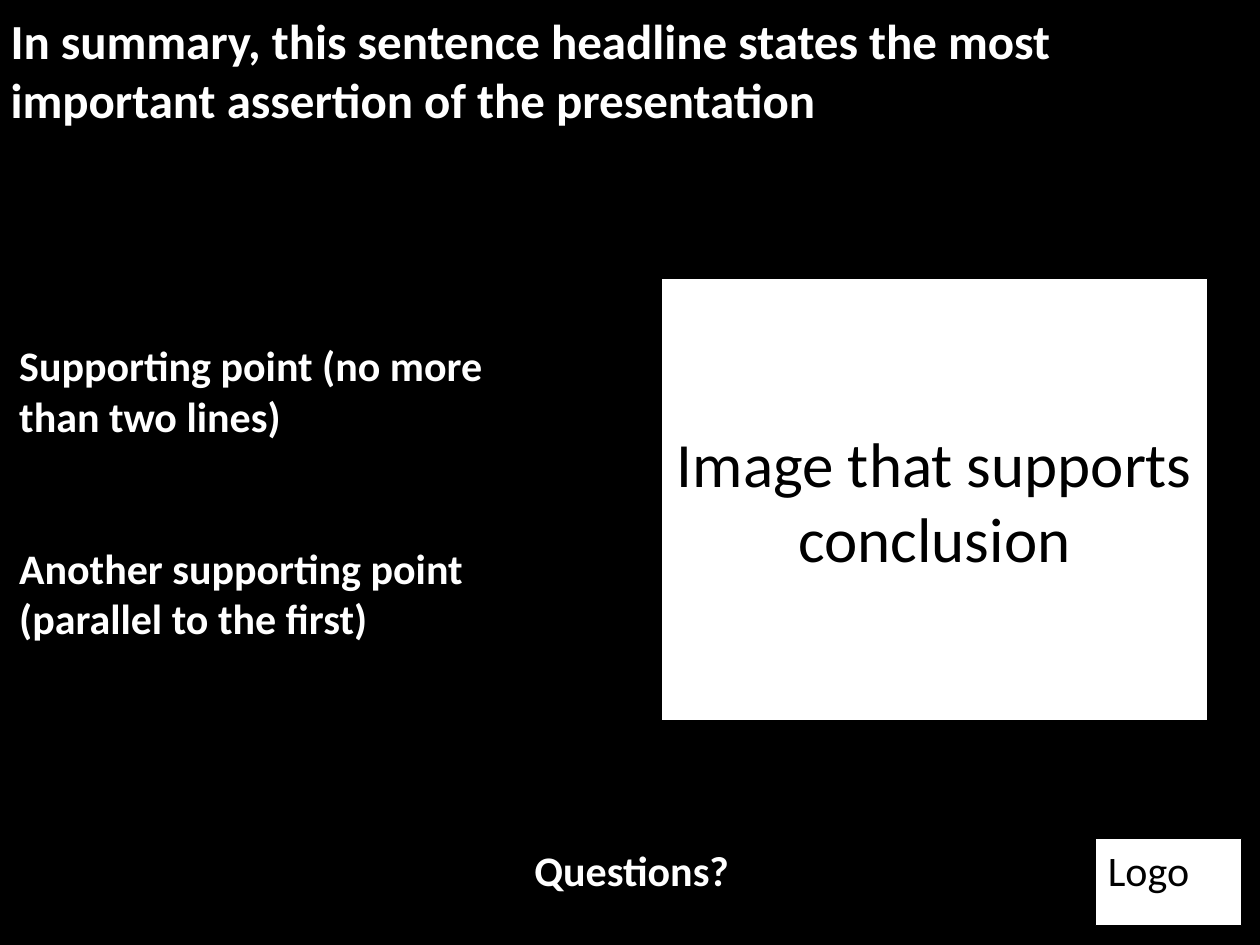
"""Build a closing slide with a headline, supporting points and an image box."""
import dataclasses

import lxml.etree
import pptx
import pptx.dml.color
import pptx.enum.shapes
import pptx.enum.text
import pptx.oxml.ns
import pptx.util

Pt = pptx.util.Pt
Align = pptx.enum.text.PP_ALIGN
Anchor = pptx.enum.text.MSO_ANCHOR
HUES = {"back": "000000", "light": "FFFFFF", "dark": "000000"}


@dataclasses.dataclass
class Box:
    left: float
    top: float
    width: float
    height: float
    lines: tuple[str, ...]
    size: float = 24
    hue: str = "light"
    bold: bool = True
    align: Align = Align.LEFT
    anchor: Anchor = Anchor.TOP
    inset: tuple[float, float] = (7.2, 3.6)
    gap: float = 0

    def frame(self) -> list[pptx.util.Length]:
        return [Pt(n) for n in (self.left, self.top, self.width, self.height)]


TITLE = Box(6, 6, 708, 68, ("In summary, this sentence headline states the most "
                            "important assertion of the presentation",),
            size=28, inset=(0, 0))
POINTS = Box(6, 192, 300, 179, ("Supporting point (no more than two lines)",
                                "Another supporting point (parallel to the first)"),
             inset=(5, 2.2), gap=58)
ASK = Box(297, 479, 128, 37, ("Questions?",), align=Align.CENTER)
CARDS = (
    Box(378, 159, 312, 253, ("Image that supports conclusion",), size=36,
        hue="dark", bold=False, align=Align.CENTER, anchor=Anchor.MIDDLE),
    Box(626, 479, 83.5, 50, ("Logo",), hue="dark", bold=False),
)


def color(name: str) -> pptx.dml.color.RGBColor:
    return pptx.dml.color.RGBColor.from_string(HUES[name])


def write(shape, box: Box) -> None:
    text = shape.text_frame
    text.text = "\n".join(box.lines)
    text.word_wrap = True
    text.auto_size = pptx.enum.text.MSO_AUTO_SIZE.NONE
    text.vertical_anchor = box.anchor
    text.margin_left = text.margin_right = Pt(box.inset[0])
    text.margin_top = text.margin_bottom = Pt(box.inset[1])
    for row, para in enumerate(text.paragraphs):
        para.alignment = box.align
        para.space_before = Pt(box.gap if row else 0)
        para.font.name = "Calibri"
        para.font.size = Pt(box.size)
        para.font.bold = box.bold
        para.font.color.rgb = color(box.hue)


def fill_holder(shape, box: Box) -> None:
    shape.left, shape.top, shape.width, shape.height = box.frame()
    write(shape, box)


def clear_bullets(shape) -> None:
    for para in shape.text_frame.paragraphs:
        props = para._p.get_or_add_pPr()
        props.set("marL", "0")
        props.set("indent", "0")
        lxml.etree.SubElement(props, pptx.oxml.ns.qn("a:buNone"))
        props.append(props.find(pptx.oxml.ns.qn("a:defRPr")))


def add_card(slide, box: Box) -> None:
    kind = pptx.enum.shapes.MSO_SHAPE.RECTANGLE
    card = slide.shapes.add_shape(kind, *box.frame())
    card.shadow.inherit = False
    card.fill.solid()
    card.fill.fore_color.rgb = color("light")
    card.line.color.rgb = color("dark")
    card.line.width = Pt(0.75)
    write(card, box)


def main() -> None:
    deck = pptx.Presentation()
    deck.slide_width, deck.slide_height = Pt(720), Pt(540)
    slide = deck.slides.add_slide(deck.slide_layouts[1])
    slide.background.fill.solid()
    slide.background.fill.fore_color.rgb = color("back")
    fill_holder(slide.shapes.title, TITLE)
    body = slide.placeholders[1]
    fill_holder(body, POINTS)
    clear_bullets(body)
    write(slide.shapes.add_textbox(*ASK.frame()), ASK)
    for card in CARDS:
        add_card(slide, card)
    deck.save("out.pptx")


if __name__ == "__main__":
    main()
